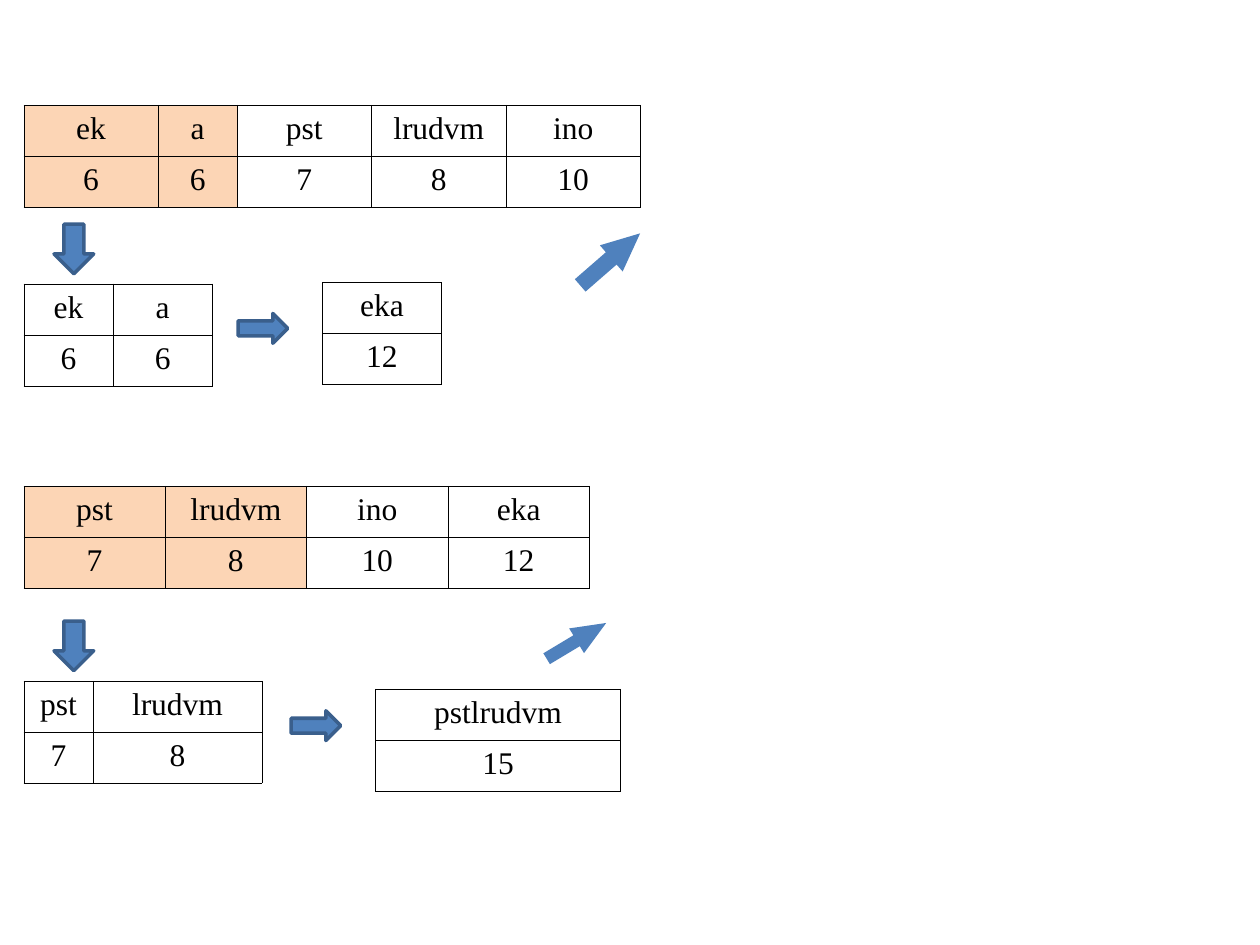
from lxml import etree
from pptx import Presentation
from pptx import util as u
from pptx.dml.color import RGBColor
from pptx.enum import shapes, text
from pptx.oxml import ns

COLORS = {
    "ink": "000000",
    "plain": "FFFFFF",
    "picked": "FCD5B5",
    "arrow": "4F81BD",
    "arrow_edge": "3A5F8C",
}
ROW_HEIGHT = 1.03
LEFT = 0.48


class MergeSlide:
    font = "Times New Roman"
    size = u.Pt(18)

    def __init__(self, deck):
        self.slide = deck.slides.add_slide(deck.slide_layouts[6])

    def color(self, name):
        return RGBColor.from_string(COLORS[name])

    def border(self, cell):
        properties = cell._tc.get_or_add_tcPr()
        for side in ("lnL", "lnR", "lnT", "lnB"):
            line = etree.SubElement(properties, ns.qn(f"a:{side}"), w=str(u.Pt(0.25)))
            fill = etree.SubElement(line, ns.qn("a:solidFill"))
            etree.SubElement(fill, ns.qn("a:srgbClr"), val=COLORS["ink"])

    def table(self, left, top, widths, names, weights, picked=0):
        """Names above weights; the first `picked` columns are tinted."""
        frame = self.slide.shapes.add_table(
            2, len(widths), u.Cm(left), u.Cm(top),
            u.Cm(sum(widths)), u.Cm(2 * ROW_HEIGHT))
        table = frame.table
        table.first_row = table.horz_banding = False
        for column, width in zip(table.columns, widths):
            column.width = u.Cm(width)
        for r, values in enumerate((names, weights)):
            table.rows[r].height = u.Cm(ROW_HEIGHT)
            for c, value in enumerate(values):
                cell = table.cell(r, c)
                self.border(cell)
                cell.fill.solid()
                cell.fill.fore_color.rgb = self.color("picked" if c < picked else "plain")
                para = cell.text_frame.paragraphs[0]
                para.text = str(value)
                para.alignment = text.PP_ALIGN.CENTER
                span = para.runs[0]
                span.font.name = self.font
                span.font.size = self.size
                span.font.color.rgb = self.color("ink")

    def arrow(self, kind, left, top, width, height, edge=True):
        arrow = self.slide.shapes.add_shape(
            kind, u.Cm(left), u.Cm(top), u.Cm(width), u.Cm(height))
        arrow.shadow.inherit = False
        arrow.fill.solid()
        arrow.fill.fore_color.rgb = self.color("arrow")
        if edge:
            arrow.line.color.rgb = self.color("arrow_edge")
            arrow.line.width = u.Pt(2)
        else:
            arrow.line.fill.background()
        return arrow

    def down_arrow(self, top):
        self.arrow(shapes.MSO_SHAPE.DOWN_ARROW, 1.09, top, 0.8, 1)

    def right_arrow(self, left, top):
        self.arrow(shapes.MSO_SHAPE.RIGHT_ARROW, left, top, 1, 0.6)

    def return_arrow(self, center_x, center_y, width, length, angle, shaft, head):
        arrow = self.arrow(
            shapes.MSO_SHAPE.UP_ARROW, center_x - width / 2, center_y - length / 2,
            width, length, edge=False)
        arrow.rotation = angle
        arrow.adjustments[0] = shaft
        arrow.adjustments[1] = head


def main():
    deck = Presentation()
    deck.slide_width, deck.slide_height = u.Cm(25.4), u.Cm(19.05)
    page = MergeSlide(deck)

    # First merge: ek + a
    page.table(LEFT, 2.12, [2.71, 1.59, 2.71, 2.71, 2.71],
               ["ek", "a", "pst", "lrudvm", "ino"], [6, 6, 7, 8, 10], picked=2)
    page.table(LEFT, 5.72, [1.8, 2], ["ek", "a"], [6, 6])
    page.down_arrow(4.52)
    page.table(6.5, 5.69, [2.4], ["eka"], [12])
    page.right_arrow(4.8, 6.32)
    page.return_arrow(12.3, 5.23, 0.7, 1.6, 49, 0.47, 1.1)

    # Second merge: pst + lrudvm
    page.table(LEFT, 9.8, [2.85] * 4,
               ["pst", "lrudvm", "ino", "eka"], [7, 8, 10, 12], picked=2)
    page.table(LEFT, 13.73, [1.4, 3.4], ["pst", "lrudvm"], [7, 8])
    page.down_arrow(12.52)
    page.table(7.57, 13.89, [4.94], ["pstlrudvm"], [15])
    page.right_arrow(5.87, 14.33)
    page.return_arrow(11.62, 12.92, 0.58, 1.4, 59, 0.44, 1.2)

    deck.save("out.pptx")


if __name__ == "__main__":
    main()
